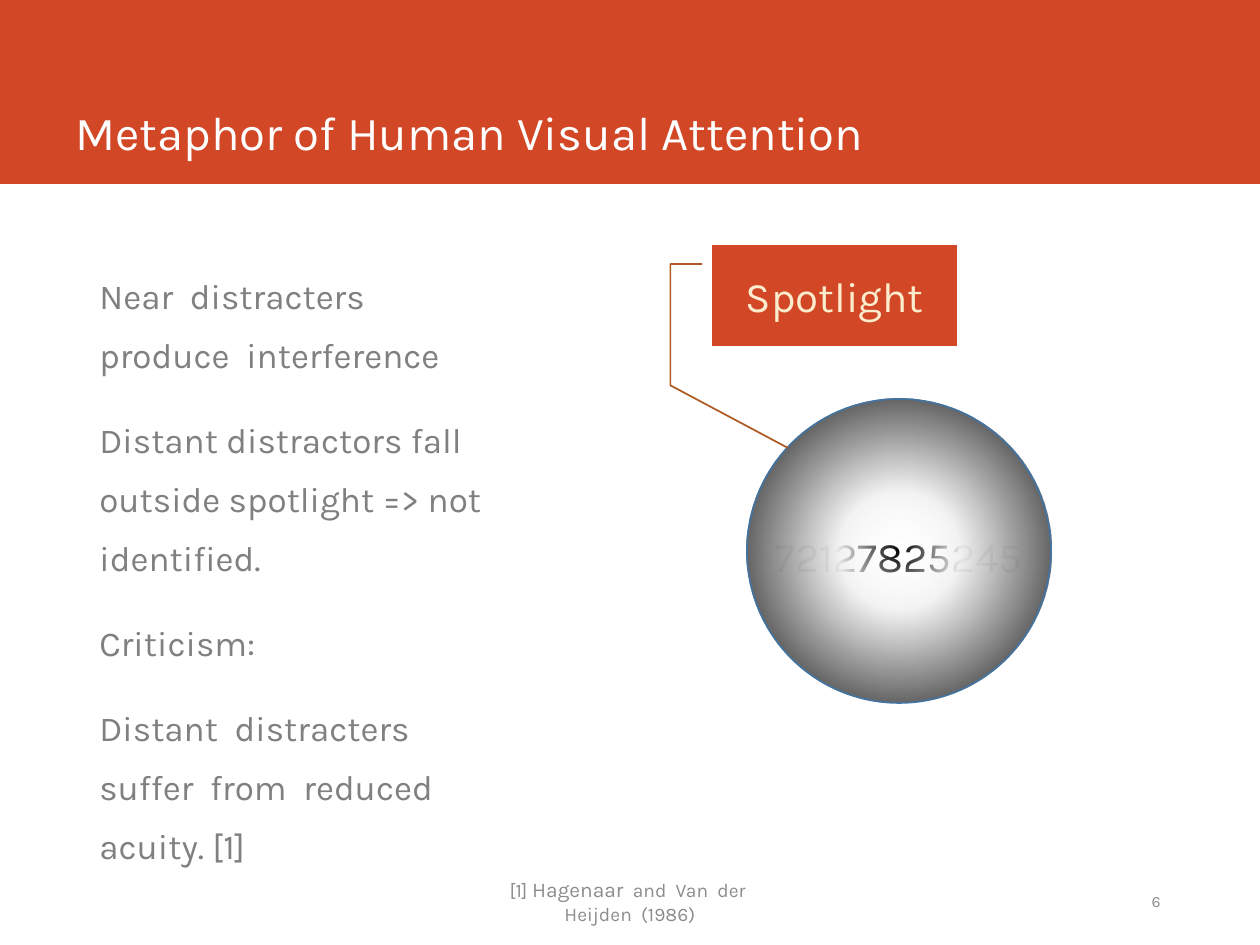
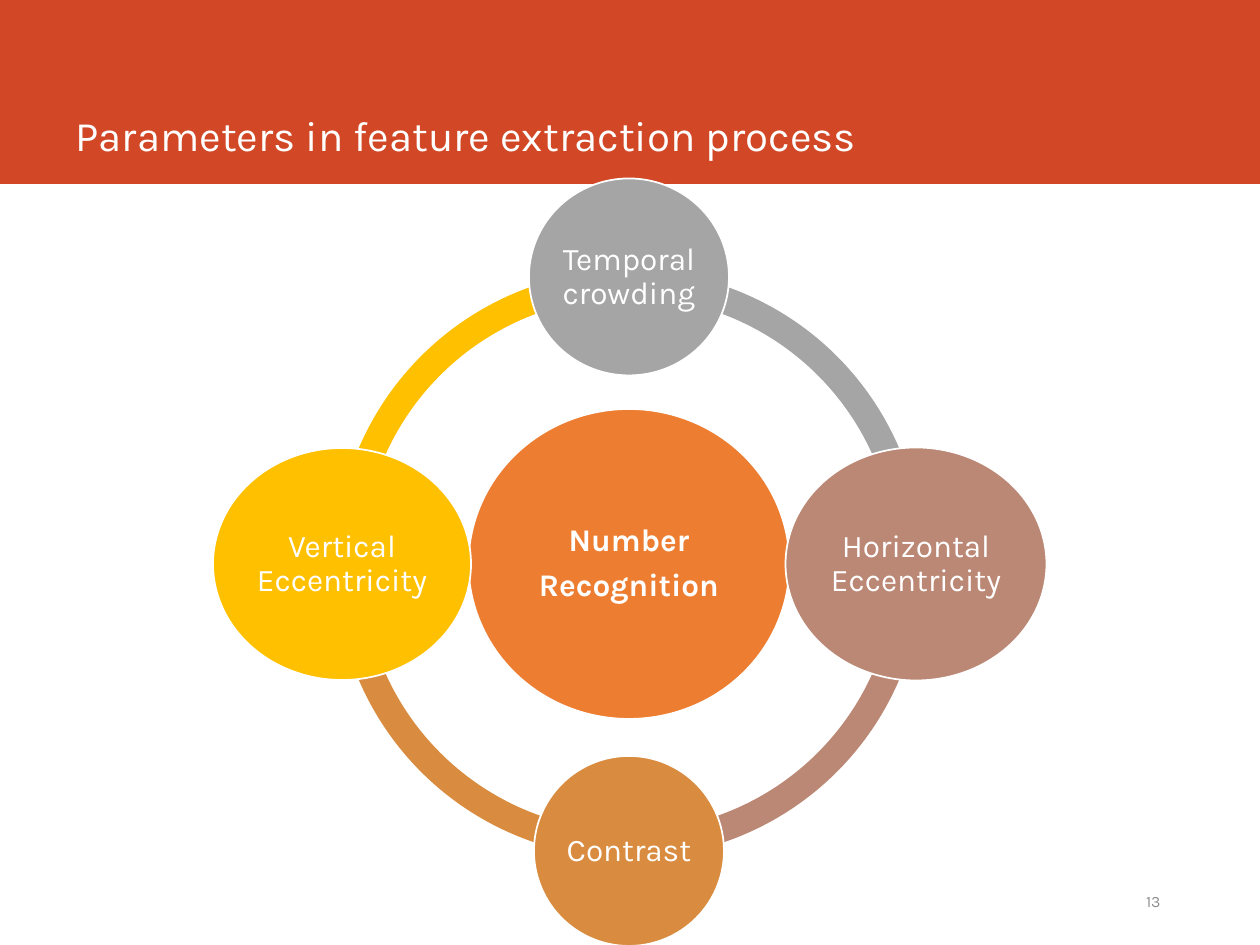
import math

import pptx
import pptx.util
import pptx.oxml
import pptx.oxml.ns
import pptx.dml.color
import pptx.enum.shapes
import pptx.enum.text

PX = 914400 / 126
FONT = "Karla"
COLORS = {
    "band": "D24726", "white": "FFFFFF", "body": "808080", "footer": "8C8C8C",
    "digits": "000000", "lens_line": "43739E", "callout_line": "AF5C24",
    "callout_text": "FBECCD", "centre": "ED7D31", "temporal": "A5A5A5",
    "horizontal": "BB8876", "contrast": "D98C3F", "vertical": "FFC000",
}
LENS_STOPS = [(0, "FFFFFF", 0), (28, "F2F2F2", 95), (100, "000000", 100)]
NODES = [
    (270, 200, 197, "Temporal crowding", "temporal"),
    (0, 261, 233, "Horizontal Eccentricity", "horizontal"),
    (90, 190, 190, "Contrast", "contrast"),
    (180, 258, 232, "Vertical Eccentricity", "vertical"),
]
SHAPE = pptx.enum.shapes.MSO_SHAPE
ALIGN = pptx.enum.text.PP_ALIGN
ANCHOR = pptx.enum.text.MSO_ANCHOR


def emu(box):
    """Turn px lengths into EMU."""
    return [pptx.util.Emu(round(v * PX)) for v in box]


def rgb(name):
    """Look up a named colour."""
    return pptx.dml.color.RGBColor.from_string(COLORS[name])


def style(p, size, color, align=ALIGN.LEFT, bold=False):
    """Set the alignment and font of a paragraph."""
    p.alignment = align
    p.font.name, p.font.size, p.font.bold = FONT, pptx.util.Pt(size), bold
    p.font.color.rgb = rgb(color)


def write(sp, lines, size, color, align=ALIGN.LEFT, anchor=ANCHOR.TOP, bold=False):
    """Fill a shape with one styled paragraph per line and return its frame."""
    tf = sp.text_frame
    tf.word_wrap = True
    tf.auto_size = pptx.enum.text.MSO_AUTO_SIZE.NONE
    tf.vertical_anchor = anchor
    for i, line in enumerate(lines):
        p = tf.add_paragraph() if i else tf.paragraphs[0]
        p.add_run().text = line
        style(p, size, color, align, bold)
    return tf


def add_shape(slide, kind, box, fill, line=None):
    """Add a flat preset shape with an optional 1 pt line."""
    sp = slide.shapes.add_shape(kind, *emu(box))
    sp.shadow.inherit = False
    sp.fill.solid()
    sp.fill.fore_color.rgb = rgb(fill)
    if line:
        sp.line.color.rgb = rgb(line)
        sp.line.width = pptx.util.Pt(1)
    else:
        sp.line.fill.background()
    return sp


def add_base(prs, title, size, number):
    """Add a slide with its band, title and page number."""
    slide = prs.slides.add_slide(prs.slide_layouts[5])
    band = add_shape(slide, SHAPE.RECTANGLE, (0, 0, 1260, 184), "band")
    slide.shapes._spTree.insert(2, band._element)
    sp = slide.shapes.title
    sp.left, sp.top, sp.width, sp.height = emu((63, 0, 1111, 166))
    write(sp, [title], size, "white", anchor=ANCHOR.BOTTOM)
    page = slide.shapes.add_textbox(*emu((834, 876, 339, 50)))
    write(page, [number], 9, "footer", ALIGN.RIGHT, ANCHOR.MIDDLE)
    return slide


def add_body(slide, box, lines):
    """Add the column of statements."""
    tf = write(slide.shapes.add_textbox(*emu(box)), lines, 20, "body")
    for p in tf.paragraphs:
        p.line_spacing = 1.4
        p.space_before, p.space_after = pptx.util.Pt(6), pptx.util.Pt(9)


def add_citation(slide, box):
    """Add the reference in the footer."""
    sp = slide.shapes.add_textbox(*emu(box))
    tf = write(sp, ["[1] "], 11, "footer", ALIGN.CENTER, ANCHOR.MIDDLE)
    p = tf.paragraphs[0]
    r = p.add_run()
    r.text = "Hagenaar"
    r.font.size = pptx.util.Pt(12)
    p.add_run().text = "  and  Van  der  Heijden  (1986)"


def set_radial(sp, stops):
    """Give a shape a circular gradient of (percent, hex, alpha) stops."""
    gs = "".join(
        f'<a:gs pos="{pos * 1000}"><a:srgbClr val="{color}">'
        f'<a:alpha val="{alpha * 1000}"/></a:srgbClr></a:gs>'
        for pos, color, alpha in stops)
    grad = pptx.oxml.parse_xml(
        f'<a:gradFill {pptx.oxml.ns.nsdecls("a")} rotWithShape="1"><a:gsLst>{gs}</a:gsLst>'
        '<a:path path="circle"><a:fillToRect l="50000" t="50000" r="50000" b="50000"/>'
        '</a:path></a:gradFill>')
    spPr = sp._element.spPr
    spPr.replace(spPr.find(pptx.oxml.ns.qn("a:solidFill")), grad)


def add_spotlight(slide, box):
    """Draw the digits under the lens, and the callout, within a box."""
    x, y, w, h = box
    lens_x, lens_y, d = x + w - 304, y + h - 304, 304
    digits = slide.shapes.add_textbox(*emu((lens_x, lens_y + 125, d, 63)))
    write(digits, ["72127825245"], 24, "digits", ALIGN.CENTER)
    lens = add_shape(slide, SHAPE.OVAL, (lens_x, lens_y, d, d), "white", "lens_line")
    set_radial(lens, LENS_STOPS)
    callout = add_shape(slide, SHAPE.LINE_CALLOUT_3_NO_BORDER, (x, y, 245, 101),
                        "band", "callout_line")
    for i, v in enumerate((0.19, -0.04, 0.19, -0.17, 1.39, -0.17, 2.01, 0.31)):
        callout.adjustments[i] = v
    write(callout, ["Spotlight"], 24, "callout_text", ALIGN.CENTER, ANCHOR.MIDDLE)


def add_disc(slide, cx, cy, w, h, lines, fill, bold=False):
    """Add a labelled ellipse around a centre point."""
    sp = add_shape(slide, SHAPE.OVAL, (cx - w / 2, cy - h / 2, w, h), fill, "white")
    tf = write(sp, lines, 18, "white", ALIGN.CENTER, ANCHOR.MIDDLE, bold)
    tf.margin_left, tf.margin_top, tf.margin_right, tf.margin_bottom = emu((4, 4, 4, 4))
    for p in tf.paragraphs:
        p.line_spacing = 0.9
        p.space_after = pptx.util.Pt(6.3)


def add_cycle(slide, box, orbit):
    """Draw the ring of quarter arcs, its hub and the nodes on its orbit."""
    x, y, w, h = box
    cx, cy = x + w / 2, y + h / 2
    for angle, _, _, _, color in NODES:
        arc = add_shape(slide, SHAPE.BLOCK_ARC, box, color)
        arc.adjustments[0] = angle * 0.6
        arc.adjustments[1] = (angle + 90) % 360 * 0.6
        arc.adjustments[2] = 0.046
    add_disc(slide, cx, cy, 321, 310, ["Number", "Recognition"], "centre", True)
    for angle, nw, nh, label, color in NODES:
        a = math.radians(angle)
        add_disc(slide, cx + orbit * math.cos(a), cy + orbit * math.sin(a),
                 nw, nh, [label], color)


def main():
    """Build both slides and save them."""
    prs = pptx.Presentation()
    prs.slide_width, prs.slide_height = emu((1260, 945))

    slide = add_base(prs, "Metaphor of Human Visual Attention", 27, "6")
    add_body(slide, (87, 252, 431, 600), [
        "Near  distracters  produce  interference",
        "Distant distractors fall outside spotlight => not identified.",
        "Criticism:",
        "Distant  distracters  suffer  from  reduced  acuity. [1]",
    ])
    add_citation(slide, (480, 876, 300, 50))
    add_spotlight(slide, (712, 245, 339, 458))

    slide = add_base(prs, "Parameters in feature extraction process", 24, "13")
    add_cycle(slide, (335, 270, 588, 588), 287)
    prs.save("out.pptx")


if __name__ == "__main__":
    main()
